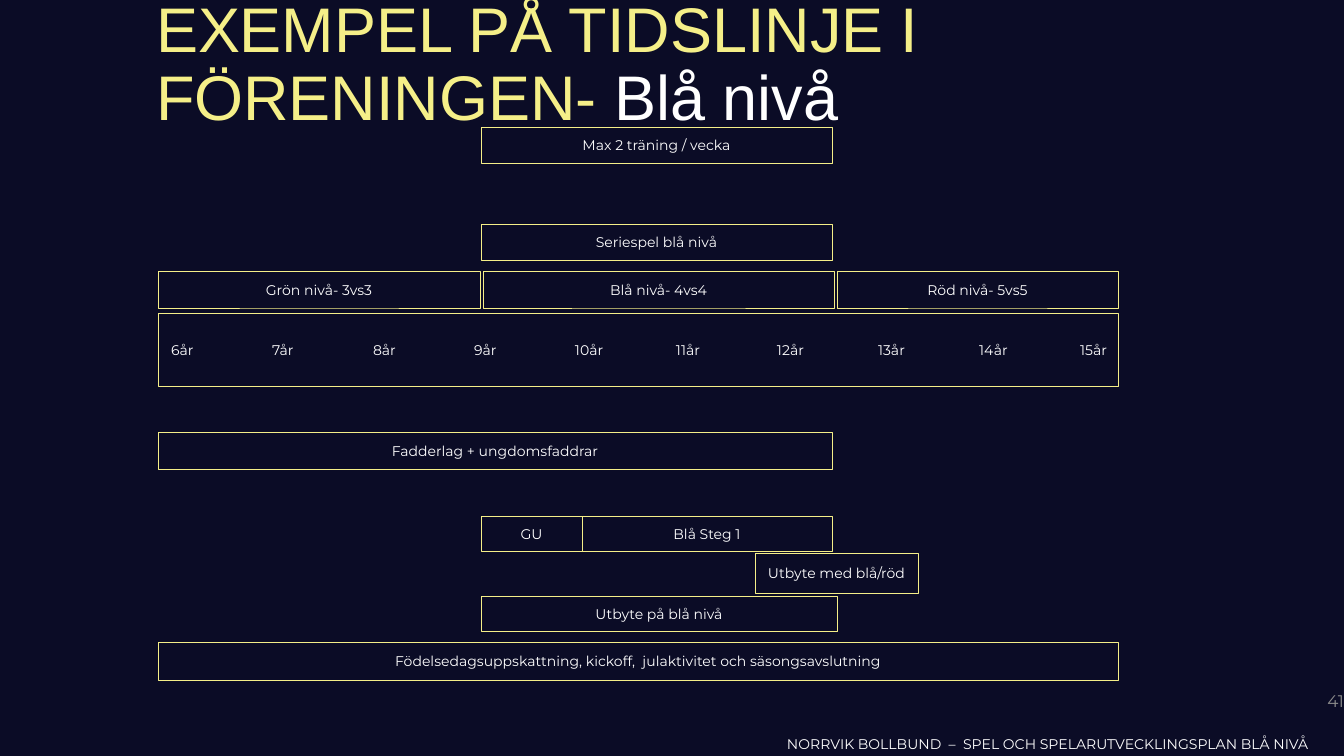
from lxml import etree
from pptx import Presentation
from pptx import util as u
from pptx.dml.color import RGBColor
from pptx.enum import shapes, text
from pptx.oxml import ns

NAVY, GOLD, WHITE, GREY = "0B0C26", "F5EF88", "FFFFFF", "8C8C8C"
BODY, HEAD = "Montserrat", "Arial"
LEFT, MID = 158, 481
AGES = range(6, 16)
STEP = 101
BANDS = [
    ("Fadderlag + ungdomsfaddrar", LEFT, 432, 674, 37),
    ("Max 2 träning / vecka", MID, 127, 351, 36),
    ("Seriespel blå nivå", MID, 224, 351, 36),
    ("Grön nivå- 3vs3", LEFT, 271, 322, 37),
    ("Blå nivå- 4vs4", 483, 271, 351, 37),
    ("Röd nivå- 5vs5", 837, 271, 281, 37),
    ("GU", MID, 516, 101, 35),
    ("Blå Steg 1", 582, 516, 250, 35),
    ("Utbyte på blå nivå", MID, 596, 356, 35),
    ("Födelsedagsuppskattning, kickoff,  julaktivitet och säsongsavslutning",
     LEFT, 642, 960, 38),
    ("Utbyte med blå/röd", 755, 553, 163, 40),
]


def px(n):
    return u.Emu(round(n * 914400 / 50.4))


def color(code):
    return RGBColor.from_string(code)


def style(run, size, code, face=BODY):
    run.font.size = u.Pt(size)
    run.font.name = face
    run.font.color.rgb = color(code)


def add_band(slide, words, x, y, w, h):
    band = slide.shapes.add_shape(
        shapes.MSO_SHAPE.RECTANGLE, px(x), px(y), px(w), px(h))
    band.shadow.inherit = False
    band.fill.background()
    band.line.color.rgb = color(GOLD)
    band.line.width = u.Pt(0.6)
    frame = band.text_frame
    frame.word_wrap = True
    frame.vertical_anchor = text.MSO_ANCHOR.MIDDLE
    frame.text = words
    para = frame.paragraphs[0]
    para.alignment = text.PP_ALIGN.CENTER
    for run in para.runs:
        style(run, 20, WHITE)
    return band


def add_ages(slide):
    words = "\t".join(f"{age}år" for age in AGES)
    band = add_band(slide, words, LEFT, 313, 960, 73)
    band.fill.solid()
    band.fill.fore_color.rgb = color(NAVY)
    frame = band.text_frame
    frame.margin_left = px(13)
    frame.margin_right = 0
    para = frame.paragraphs[0]
    para.alignment = text.PP_ALIGN.LEFT
    stops = etree.SubElement(para._p.get_or_add_pPr(), ns.qn("a:tabLst"))
    for i in range(1, len(AGES)):
        etree.SubElement(stops, ns.qn("a:tab"), pos=str(px(i * STEP)), algn="l")


def add_label(slide, words, x, y, w, h, size, code, align):
    box = slide.shapes.add_textbox(px(x), px(y), px(w), px(h))
    frame = box.text_frame
    frame.word_wrap = True
    frame.margin_left = frame.margin_right = 0
    frame.vertical_anchor = text.MSO_ANCHOR.MIDDLE
    frame.text = words
    para = frame.paragraphs[0]
    para.alignment = align
    style(para.runs[0], size, code)


def set_title(slide):
    title = slide.shapes.title
    title.left, title.top = px(151), px(29)
    title.width, title.height = px(1159), px(75)
    frame = title.text_frame
    frame.word_wrap = True
    frame.auto_size = text.MSO_AUTO_SIZE.NONE
    frame.vertical_anchor = text.MSO_ANCHOR.MIDDLE
    para = frame.paragraphs[0]
    para.alignment = text.PP_ALIGN.LEFT
    para.line_spacing = 0.9
    parts = [("EXEMPEL PÅ TIDSLINJE I FÖRENINGEN- ", GOLD), ("Blå nivå", WHITE)]
    for words, code in parts:
        run = para.add_run()
        run.text = words
        style(run, 90, code, HEAD)


def main():
    deck = Presentation()
    deck.slide_width, deck.slide_height = px(1344), px(756)
    slide = deck.slides.add_slide(deck.slide_layouts[5])
    slide.background.fill.solid()
    slide.background.fill.fore_color.rgb = color(NAVY)
    set_title(slide)
    add_ages(slide)
    for band in BANDS:
        add_band(slide, *band)
    add_label(slide, "41", 1268, 681, 76, 40, 24, GREY, text.PP_ALIGN.RIGHT)
    add_label(slide, "NORRVIK BOLLBUND  –  SPEL OCH SPELARUTVECKLINGSPLAN BLÅ NIVÅ",
              787, 733, 556, 22, 20, WHITE, text.PP_ALIGN.LEFT)
    deck.save("out.pptx")


if __name__ == "__main__":
    main()
